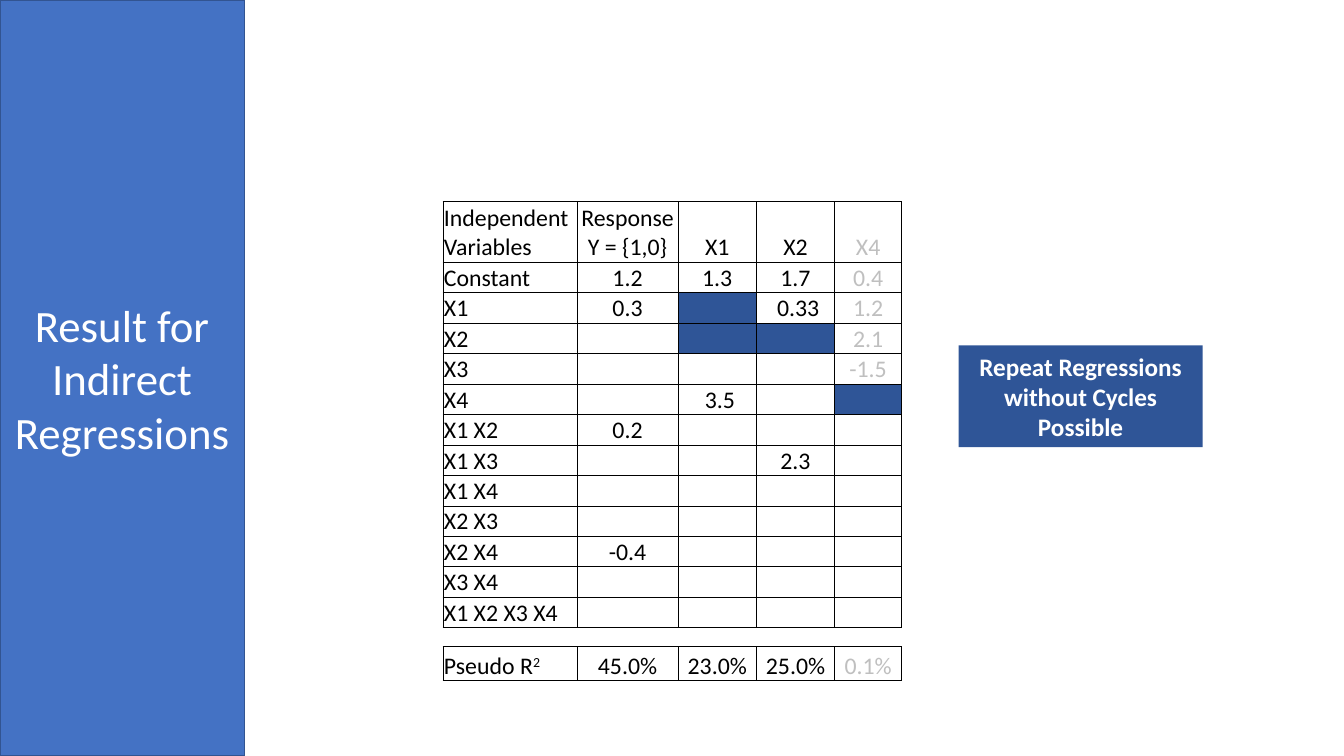
from dataclasses import dataclass

from lxml import etree
from pptx import Presentation
from pptx.dml.color import RGBColor
from pptx.enum import shapes, text
from pptx.oxml import ns
from pptx.util import Pt


@dataclass(frozen=True)
class Theme:
    font: str = "Calibri"
    panel: str = "4472C4"
    panel_line: str = "325491"
    accent: str = "2F5597"
    ink: str = "000000"
    muted: str = "BFBFBF"
    paper: str = "FFFFFF"
    title_size: int = 32
    callout_size: int = 18
    table_size: int = 17
    spacer_size: int = 8


THEME = Theme()
BLOCKED = "#"  # marks a cell that is filled in
HEADER = ["Independent Variables", "Response Y = {1,0}", "X1", "X2", "X4"]
COEFFICIENTS = [
    ["Constant", "1.2", "1.3", "1.7", "0.4"],
    ["X1", "0.3", BLOCKED, " 0.33", "1.2"],
    ["X2", "", BLOCKED, BLOCKED, "2.1"],
    ["X3", "", "", "", "-1.5"],
    ["X4", "", " 3.5", "", BLOCKED],
    ["X1 X2", "0.2", "", "", ""],
    ["X1 X3", "", "", "2.3", ""],
    ["X1 X4", "", "", "", ""],
    ["X2 X3", "", "", "", ""],
    ["X2 X4", "", "-0.4", "", ""],
    ["X3 X4", "", "", "", ""],
    ["X1 X2 X3 X4", "", "", "", ""],
]
COEFFICIENTS[9] = ["X2 X4", "-0.4", "", "", ""]
SPACER = [""] * 5
FIT = ["Pseudo R", "45.0%", "23.0%", "25.0%", "0.1%"]
COLUMN_WIDTHS = [95.8, 72.2, 55.9, 55.9, 47.9]
ROW_HEIGHTS = [43.6] + [21.75] * len(COEFFICIENTS) + [13.5, 24.5]


def color(value):
    return RGBColor.from_string(value)


def style_paragraph(paragraph, size, ink, align, bold=False):
    paragraph.alignment = align
    paragraph.font.name = THEME.font
    paragraph.font.size = Pt(size)
    paragraph.font.bold = bold
    paragraph.font.color.rgb = color(ink)


def place(shape, left, top, width, height):
    shape.left, shape.top = Pt(left), Pt(top)
    shape.width, shape.height = Pt(width), Pt(height)


def fill_solid(target, value):
    target.fill.solid()
    target.fill.fore_color.rgb = color(value)


def set_text(shape, wording, size, bold=False):
    frame = shape.text_frame
    frame.text = wording
    frame.word_wrap = True
    frame.auto_size = text.MSO_AUTO_SIZE.NONE
    frame.vertical_anchor = text.MSO_ANCHOR.MIDDLE
    style_paragraph(frame.paragraphs[0], size, THEME.paper, text.PP_ALIGN.CENTER, bold)


def add_title_panel(slide):
    panel = slide.shapes.title
    place(panel, 0, 0, 174.5, 540)
    fill_solid(panel, THEME.panel)
    panel.line.color.rgb = color(THEME.panel_line)
    panel.line.width = Pt(1)
    set_text(panel, "Result for Indirect Regressions", THEME.title_size)


def add_callout(slide):
    callout = slide.shapes.add_shape(
        shapes.MSO_SHAPE.RECTANGLE, Pt(684.7), Pt(246.7), Pt(174.4), Pt(72.7))
    callout.shadow.inherit = False
    callout.line.fill.background()
    fill_solid(callout, THEME.accent)
    set_text(callout, "Repeat Regressions without Cycles Possible",
             THEME.callout_size, bold=True)


def set_borders(cell, visible):
    properties = cell._tc.get_or_add_tcPr()
    for side in ("L", "R", "T", "B"):
        line = etree.SubElement(properties, ns.qn(f"a:ln{side}"), w=str(Pt(0.5)))
        if side in visible:
            solid = etree.SubElement(line, ns.qn("a:solidFill"))
            etree.SubElement(solid, ns.qn("a:srgbClr"), val=THEME.ink)
        else:
            etree.SubElement(line, ns.qn("a:noFill"))


def fill_cell(cell, wording, column, is_spacer):
    set_borders(cell, "TB" if is_spacer else "LRTB")
    cell.margin_left = cell.margin_right = cell.margin_top = Pt(0.7)
    cell.margin_bottom = 0
    cell.vertical_anchor = text.MSO_ANCHOR.BOTTOM
    if wording == BLOCKED:
        fill_solid(cell, THEME.accent)
    else:
        cell.fill.background()
        cell.text_frame.text = wording
    style_paragraph(
        cell.text_frame.paragraphs[0],
        THEME.spacer_size if is_spacer else THEME.table_size,
        THEME.muted if column == len(HEADER) - 1 else THEME.ink,
        text.PP_ALIGN.CENTER if column else text.PP_ALIGN.LEFT)


def add_superscript(paragraph, wording):
    run = paragraph.add_run()
    run.text = wording
    run._r.get_or_add_rPr().set("baseline", "30000")


def add_regression_table(slide):
    rows = [HEADER, *COEFFICIENTS, SPACER, FIT]
    frame = slide.shapes.add_table(
        len(rows), len(HEADER), Pt(316.4), Pt(143.8),
        Pt(sum(COLUMN_WIDTHS)), Pt(sum(ROW_HEIGHTS)))
    table = frame.table
    table.first_row = table.horz_banding = False
    for column, width in zip(table.columns, COLUMN_WIDTHS):
        column.width = Pt(width)
    for row, height in zip(table.rows, ROW_HEIGHTS):
        row.height = Pt(height)
    for row_index, values in enumerate(rows):
        for column_index, wording in enumerate(values):
            fill_cell(table.cell(row_index, column_index), wording,
                      column_index, values is SPACER)
    fit_label = table.cell(len(rows) - 1, 0)
    add_superscript(fit_label.text_frame.paragraphs[0], "2")


def main():
    presentation = Presentation()
    presentation.slide_width, presentation.slide_height = Pt(960), Pt(540)
    title_only = presentation.slide_layouts[5]
    slide = presentation.slides.add_slide(title_only)
    add_title_panel(slide)
    add_regression_table(slide)
    add_callout(slide)
    presentation.save("out.pptx")


if __name__ == "__main__":
    main()
